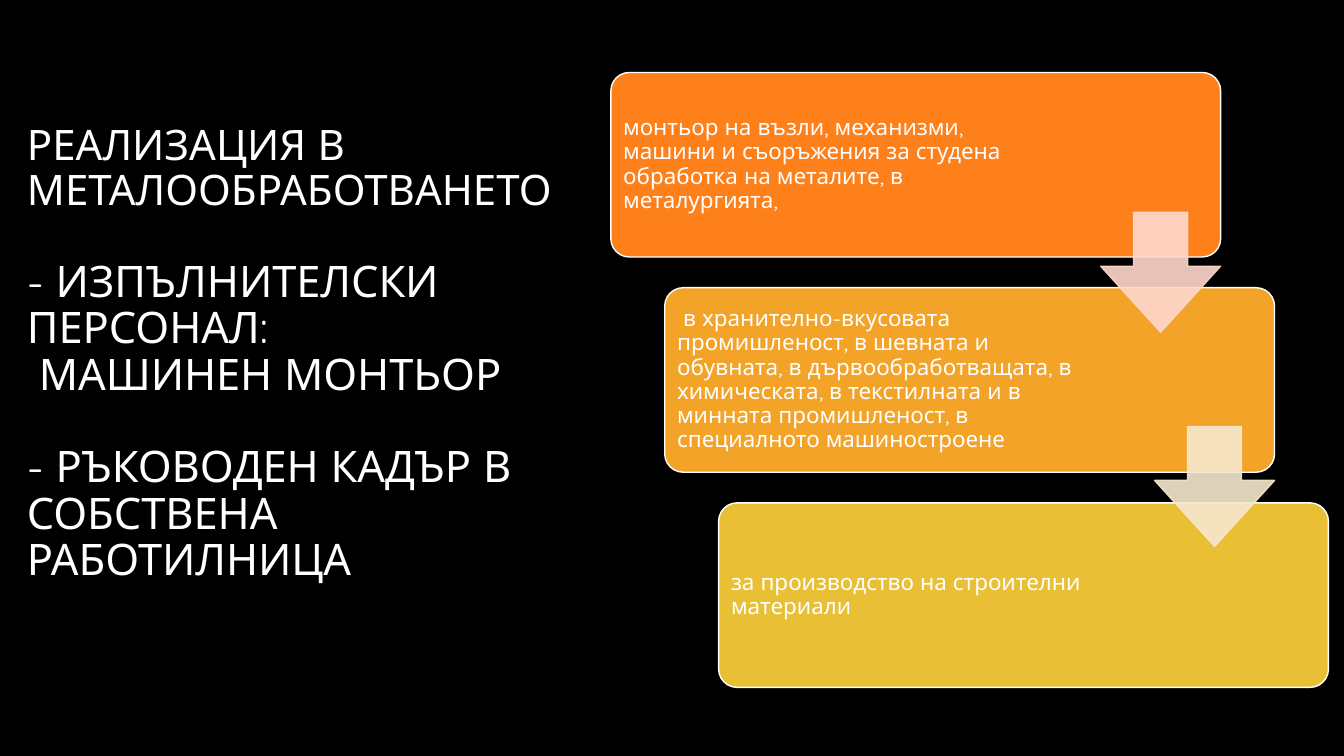
from lxml import etree
from pptx import Presentation
from pptx.dml.color import RGBColor
from pptx.enum.shapes import MSO_SHAPE
from pptx.enum.text import MSO_ANCHOR, PP_ALIGN
from pptx.oxml.ns import qn
from pptx.util import Pt

ROUNDED = MSO_SHAPE.ROUNDED_RECTANGLE
DOWN_ARROW = MSO_SHAPE.DOWN_ARROW
MIDDLE = MSO_ANCHOR.MIDDLE
LEFT = PP_ALIGN.LEFT

COLOURS = {
    "background": "000000",
    "text": "FFFFFF",
    "orange": "FE801A",
    "amber": "F3A328",
    "yellow": "E9BF35",
    "pink": "FFD8CD",
    "cream": "F7E8CE",
}

# Text, size, space before
TITLE_LINES = [
    ("РЕАЛИЗАЦИЯ В МЕТАЛООБРАБОТВАНЕТО", 30, 0),
    ("- ИЗПЪЛНИТЕЛСКИ ПЕРСОНАЛ:", 31, 33),
    (" МАШИНЕН МОНТЬОР", 31, 0),
    ("- РЪКОВОДЕН КАДЪР В СОБСТВЕНА РАБОТИЛНИЦА", 31, 33),
]

# Text, fill, text width
STEPS = [
    ("монтьор на възли, механизми, машини и съоръжения за студена "
     "обработка на металите, в металургията,", "orange", 293),
    (" в хранително-вкусовата промишленост, в шевната и обувната, "
     "в дървообработващата, в химическата, в текстилната и в минната "
     "промишленост, в специалното машиностроене", "amber", 304),
    ("за производство на строителни материали", "yellow", 304),
]
ARROWS = ["pink", "cream"]

CARD_LEFT, CARD_TOP = 436.3, 51.8
CARD_WIDTH, CARD_HEIGHT = 435.6, 131.8
STEP_RIGHT, STEP_DOWN = 38.5, 153.7
TEXT_OFFSET = 3.9
ARROW_LEFT, ARROW_TOP = 786.2, 151.6
ARROW_SIZE, ARROW_STEP_DOWN = 85.7, 153


class SlideBuilder:
    def __init__(self, slide, font, colours):
        self.slide = slide
        self.font = font
        self.colours = colours

    def colour(self, name):
        return RGBColor.from_string(self.colours[name])

    def background(self, name):
        fill = self.slide.background.fill
        fill.solid()
        fill.fore_color.rgb = self.colour(name)

    def shape(self, kind, place, fill, line, adjustments, opacity=100):
        shape = self.slide.shapes.add_shape(kind, *map(Pt, place))
        shape.shadow.inherit = False
        for index, value in enumerate(adjustments):
            shape.adjustments[index] = value
        shape.fill.solid()
        shape.fill.fore_color.rgb = self.colour(fill)
        shape.line.color.rgb = self.colour(line)
        shape.line.width = Pt(1)
        if opacity < 100:
            for colour in shape.fill._xPr.iter(qn("a:srgbClr")):
                alpha = etree.SubElement(colour, qn("a:alpha"))
                alpha.set("val", str(opacity * 1000))

    def text(self, place, lines, spacing, insets):
        """Write lines of (text, size, space before); insets run left, top, right, bottom."""
        frame = self.slide.shapes.add_textbox(*map(Pt, place)).text_frame
        frame.word_wrap = True
        frame.vertical_anchor = MIDDLE
        (frame.margin_left, frame.margin_top,
         frame.margin_right, frame.margin_bottom) = map(Pt, insets)
        for index, (text, size, space_before) in enumerate(lines):
            para = frame.add_paragraph() if index else frame.paragraphs[0]
            para.text = text
            para.alignment = LEFT
            para.line_spacing = spacing
            if space_before:
                para.space_before = Pt(space_before)
            para.font.name = self.font
            para.font.size = Pt(size)
            para.font.color.rgb = self.colour("text")


def main():
    deck = Presentation()
    deck.slide_width, deck.slide_height = Pt(960), Pt(540)
    page = SlideBuilder(deck.slides.add_slide(deck.slide_layouts[6]), "Quicksand", COLOURS)
    page.background("background")

    page.text((12.2, 50.4, 424, 439.2), TITLE_LINES, 0.89, (7.2, 3.6, 7.2, 37))

    for index, (text, fill, text_width) in enumerate(STEPS):
        left = CARD_LEFT + index * STEP_RIGHT
        top = CARD_TOP + index * STEP_DOWN
        page.shape(ROUNDED, (left, top, CARD_WIDTH, CARD_HEIGHT), fill, "text", [0.1])
        page.text((left + TEXT_OFFSET, top + TEXT_OFFSET,
                   text_width, CARD_HEIGHT - 2 * TEXT_OFFSET),
                  [(text, 16, 0)], 0.9, (5, 5, 5, 5))

    for index, colour in enumerate(ARROWS):
        place = (ARROW_LEFT + index * STEP_RIGHT, ARROW_TOP + index * ARROW_STEP_DOWN,
                 ARROW_SIZE, ARROW_SIZE)
        page.shape(DOWN_ARROW, place, colour, colour, [0.45, 0.55], opacity=90)

    deck.save("out.pptx")


if __name__ == "__main__":
    main()
